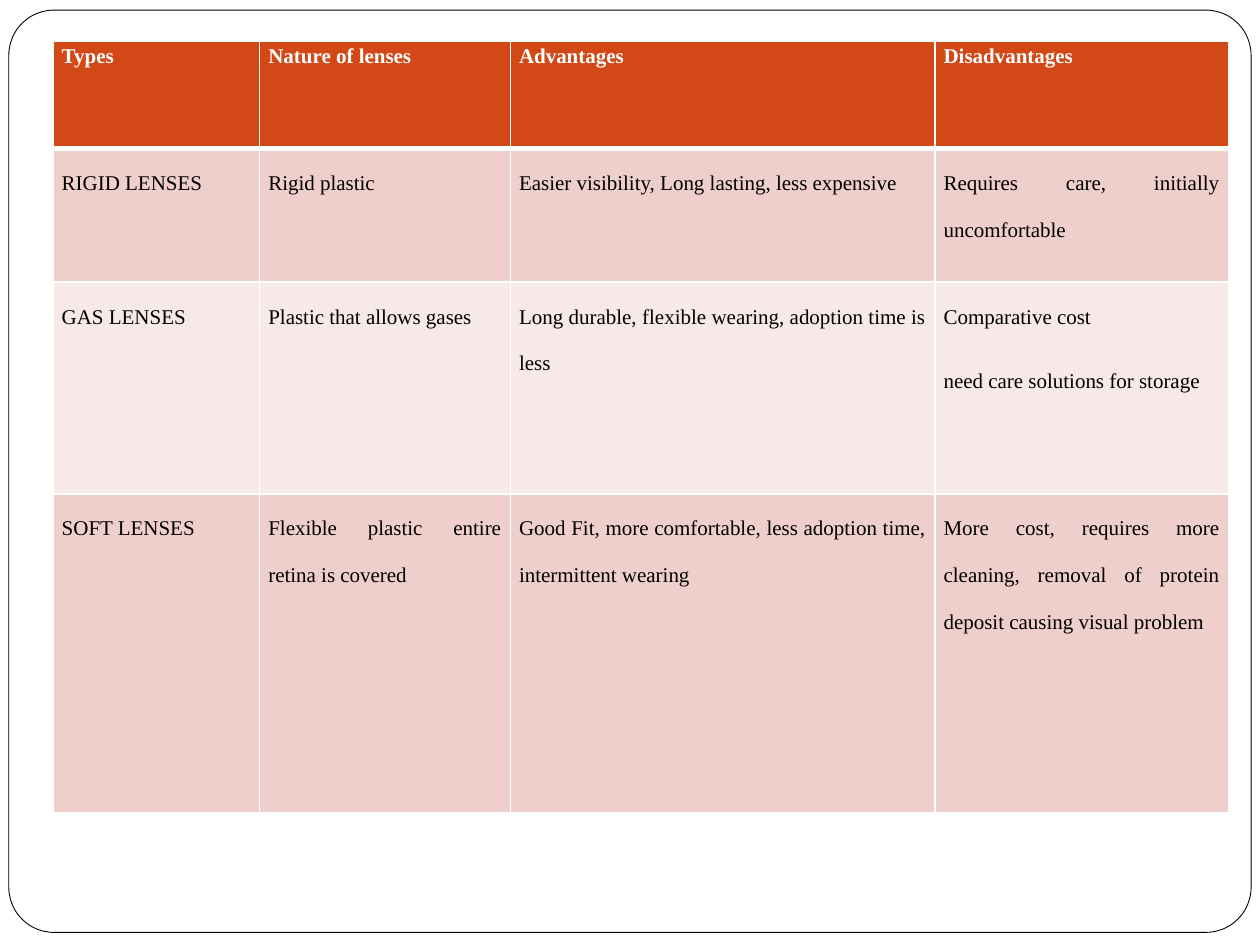
import pptx
import pptx.dml.color
import pptx.enum.shapes
import pptx.enum.text
import pptx.oxml
import pptx.oxml.ns
import pptx.util
from pptx.dml.color import RGBColor
from pptx.util import Inches

WHITE = RGBColor(0xFF, 0xFF, 0xFF)
BLACK = RGBColor(0, 0, 0)
HEADER_ORANGE = RGBColor(0xD3, 0x48, 0x17)
BAND_DARK = RGBColor(0xEF, 0xCF, 0xCC)
BAND_LIGHT = RGBColor(0xF7, 0xE9, 0xE8)

FONT = "Times New Roman"
COLUMN_WIDTHS = [1.64, 1.99, 3.37, 2.33]
ROW_HEIGHTS = [0.85, 1.06, 1.68, 2.53]
LENSES = [
    ["Types", "Nature of lenses", "Advantages", "Disadvantages"],
    ["RIGID LENSES", "Rigid plastic",
     "Easier visibility, Long lasting, less expensive",
     "Requires care, initially uncomfortable"],
    ["GAS LENSES", "Plastic that allows gases",
     "Long durable, flexible wearing, adoption time is less",
     "Comparative cost\nneed care solutions for storage"],
    ["SOFT LENSES", "Flexible plastic entire retina is covered",
     "Good Fit, more comfortable, less adoption time, intermittent wearing",
     "More cost, requires more cleaning, removal of protein deposit "
     "causing visual problem"],
]


def add_frame(slide):
    frame = slide.shapes.add_shape(
        pptx.enum.shapes.MSO_SHAPE.ROUNDED_RECTANGLE,
        Inches(0.07), Inches(0.08), Inches(9.86), Inches(7.32))
    frame.adjustments[0] = 0.049
    frame.shadow.inherit = False
    frame.fill.solid()
    frame.fill.fore_color.rgb = WHITE
    frame.line.color.rgb = BLACK
    frame.line.width = pptx.util.Pt(0.5)


def set_borders(cell, top, bottom):
    """Draw white cell borders; top and bottom widths are in points."""
    properties = cell._tc.get_or_add_tcPr()
    sides = [("L", 1), ("R", 1), ("T", top), ("B", bottom)]
    for position, (side, width) in enumerate(sides):
        border = pptx.oxml.parse_xml(
            f'<a:ln{side} {pptx.oxml.ns.nsdecls("a")} w="{pptx.util.Pt(width)}">'
            f'<a:solidFill><a:srgbClr val="{WHITE}"/></a:solidFill></a:ln{side}>')
        properties.insert(position, border)


def fill_cell(cell, text, fill, is_header, is_last_column):
    cell.margin_left = cell.margin_right = Inches(0.07)
    cell.margin_top = cell.margin_bottom = 0
    cell.fill.solid()
    cell.fill.fore_color.rgb = fill
    cell.text_frame.text = text
    for paragraph in cell.text_frame.paragraphs:
        paragraph.alignment = pptx.enum.text.PP_ALIGN.JUSTIFY
        paragraph.line_spacing = 1.15 if is_header else 2.0
        if is_last_column:
            paragraph.space_after = pptx.util.Pt(10)
        for run in paragraph.runs:
            run.font.name = FONT
            run.font.size = pptx.util.Pt(12)
            run.font.bold = is_header
            run.font.color.rgb = WHITE if is_header else BLACK


def add_lens_table(slide):
    table = slide.shapes.add_table(
        len(ROW_HEIGHTS), len(COLUMN_WIDTHS), Inches(0.42), Inches(0.33),
        Inches(sum(COLUMN_WIDTHS)), Inches(sum(ROW_HEIGHTS))).table
    for column, width in zip(table.columns, COLUMN_WIDTHS):
        column.width = Inches(width)
    for row, height in zip(table.rows, ROW_HEIGHTS):
        row.height = Inches(height)

    last_column = len(COLUMN_WIDTHS) - 1
    for r, texts in enumerate(LENSES):
        is_header = r == 0
        band = BAND_DARK if r % 2 else BAND_LIGHT
        for c, text in enumerate(texts):
            cell = table.cell(r, c)
            fill_cell(cell, text, HEADER_ORANGE if is_header else band,
                      is_header, c == last_column)
            set_borders(cell, top=3 if r == 1 else 1,
                        bottom=3 if is_header else 1)


def main():
    presentation = pptx.Presentation()
    presentation.slide_width = Inches(10)
    presentation.slide_height = Inches(7.5)
    slide = presentation.slides.add_slide(presentation.slide_layouts[6])
    add_frame(slide)
    add_lens_table(slide)
    presentation.save("out.pptx")


if __name__ == "__main__":
    main()
